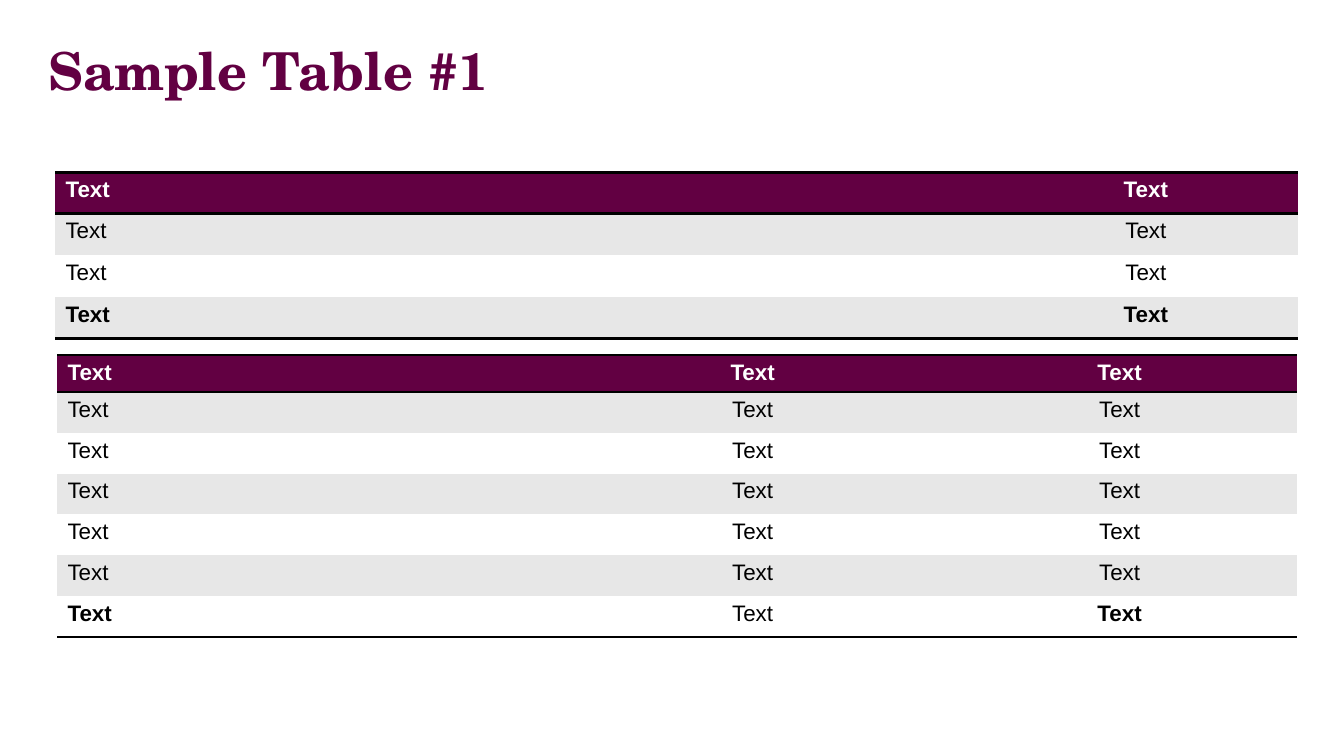
from lxml.etree import SubElement
from pptx import Presentation
from pptx.dml.color import RGBColor
from pptx.enum.text import MSO_ANCHOR, PP_ALIGN
from pptx.oxml.ns import qn
from pptx.util import Inches, Pt

PLUM = RGBColor(0x62, 0x00, 0x42)
GREY = RGBColor(0xE7, 0xE7, 0xE7)
WHITE = RGBColor(0xFF, 0xFF, 0xFF)
BLACK = RGBColor(0x00, 0x00, 0x00)
PLAIN = "{2D5ABB26-0587-4C30-8999-92F81FD0307C}"

TITLE = "Sample Table #1"
TABLES = [
    {"left": 0.55, "top": 1.71, "cols": [9.31, 3.01],
     "head": 0.41, "height": 1.65, "bold": {0, 1},
     "rows": [["Text", "Text"]] * 4},
    {"left": 0.57, "top": 3.52, "cols": [5.01, 3.77, 3.51],
     "head": 0.37, "height": 2.8, "bold": {0, 2},
     "rows": [["Text", "Text", "Text"]] * 7},
]


def add_run(par, text, font, size, color, bold):
    run = par.add_run()
    run.text = text
    run.font.name = font
    run.font.size = Pt(size)
    run.font.color.rgb = color
    run.font.bold = bold


def add_rule(cell, side):
    line = SubElement(cell._tc.get_or_add_tcPr(), qn("a:" + side), w=str(Pt(2)))
    fill = SubElement(line, qn("a:solidFill"))
    SubElement(fill, qn("a:srgbClr"), val=str(BLACK))


def add_grid(slide, data):
    rows, cols = data["rows"], data["cols"]
    last = len(rows) - 1
    frame = slide.shapes.add_table(
        len(rows), len(cols), Inches(data["left"]), Inches(data["top"]),
        Inches(sum(cols)), Inches(data["height"]))
    table = frame.table
    table._tbl.tblPr.find(qn("a:tableStyleId")).text = PLAIN
    for col, width in zip(table.columns, cols):
        col.width = Inches(width)
    step = (data["height"] - data["head"]) / last
    for r, texts in enumerate(rows):
        head = r == 0
        table.rows[r].height = Inches(data["head"] if head else step)
        for c, text in enumerate(texts):
            cell = table.cell(r, c)
            if head:
                add_rule(cell, "lnT")
            if r in (0, last):
                add_rule(cell, "lnB")
            cell.fill.solid()
            cell.fill.fore_color.rgb = PLUM if head else GREY if r % 2 else WHITE
            par = cell.text_frame.paragraphs[0]
            par.alignment = PP_ALIGN.CENTER if c else PP_ALIGN.LEFT
            bold = head or (r == last and c in data["bold"])
            add_run(par, text, "Arial", 16, WHITE if head else BLACK, bold)


def add_title(slide):
    box = slide.shapes.add_textbox(
        Inches(0.38), Inches(0.01), Inches(12.53), Inches(1.45))
    frame = box.text_frame
    frame.word_wrap = True
    frame.vertical_anchor = MSO_ANCHOR.MIDDLE
    par = frame.paragraphs[0]
    par.line_spacing = 0.9
    add_run(par, TITLE, "TeX Gyre Schola", 37.3, PLUM, True)


def main():
    deck = Presentation()
    deck.slide_width, deck.slide_height = Inches(13.33), Inches(7.5)
    slide = deck.slides.add_slide(deck.slide_layouts[6])
    for data in TABLES:
        add_grid(slide, data)
    add_title(slide)
    deck.save("out.pptx")


if __name__ == "__main__":
    main()
